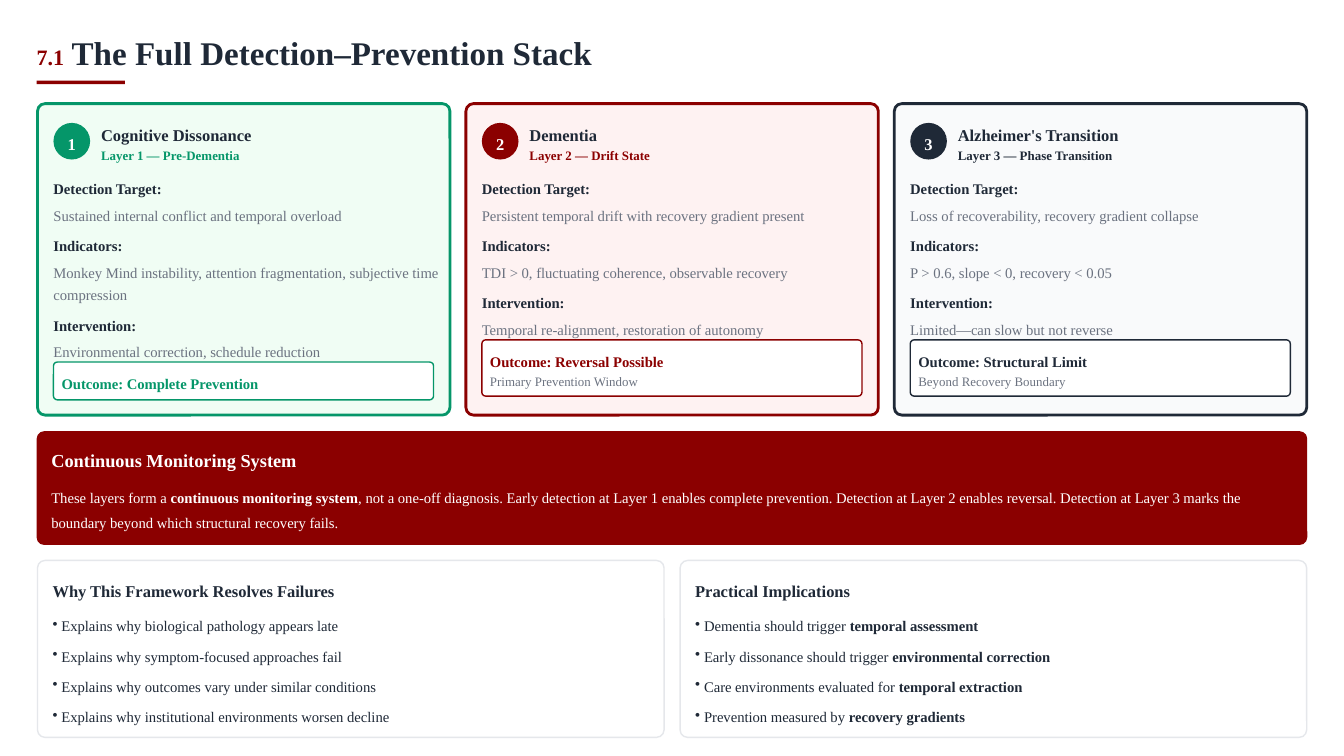
from dataclasses import dataclass
from typing import NamedTuple

from lxml.etree import SubElement
from pptx import Presentation
from pptx.dml.color import RGBColor
from pptx.enum.shapes import MSO_SHAPE as Preset
from pptx.enum.text import MSO_ANCHOR as Anchor, PP_ALIGN as Align
from pptx.oxml.ns import qn
from pptx.util import Pt

FONT = "Times New Roman"
WHITE = RGBColor(0xFF, 0xFF, 0xFF)
INK = RGBColor(0x1F, 0x29, 0x37)
GREY = RGBColor(0x6B, 0x72, 0x80)
RULE = RGBColor(0xE5, 0xE7, 0xEB)
CRIMSON = RGBColor(0x8B, 0x00, 0x00)
GREEN = RGBColor(0x05, 0x96, 0x69)
MINT = RGBColor(0xF0, 0xFD, 0xF4)
ROSE = RGBColor(0xFE, 0xF2, 0xF2)
MIST = RGBColor(0xF9, 0xFA, 0xFB)

LEFT, CONTENT_WIDTH = 26.2, 907.6
CARD_LEFT, CARD_TOP, CARD_WIDTH, CARD_HEIGHT, CARD_STEP = 26.8, 74, 294.6, 222.5, 306
PANEL_TOP, PANEL_WIDTH, PANEL_HEIGHT, PANEL_STEP = 400.3, 447.6, 126.4, 459
BODY_SIZE, LINE_HEIGHT, BULLET_INDENT = 10.5, 15.8, 6.3
SECTION_STEP = 39.4


class Box(NamedTuple):
    left: float
    top: float
    width: float
    height: float


class Run(NamedTuple):
    text: str
    bold: bool = False


@dataclass
class Line:
    runs: list[Run]
    size: float = BODY_SIZE
    color: RGBColor = INK
    spacing: float = 1.3
    before: float = 0
    align: Align = Align.LEFT
    bullet: bool = False


@dataclass
class Layer:
    title: str
    state: str
    accent: RGBColor
    tint: RGBColor
    findings: list[str]
    outcome: str
    outcome_note: str = ""
    wrapped_lines: int = 0


@dataclass
class Panel:
    title: str
    points: list[list[Run]]


LABELS = ["Detection Target:", "Indicators:", "Intervention:"]
LAYERS = [
    Layer("Cognitive Dissonance", "Pre-Dementia", GREEN, MINT,
          ["Sustained internal conflict and temporal overload",
           "Monkey Mind instability, attention fragmentation, subjective time compression",
           "Environmental correction, schedule reduction"],
          "Complete Prevention", wrapped_lines=1),
    Layer("Dementia", "Drift State", CRIMSON, ROSE,
          ["Persistent temporal drift with recovery gradient present",
           "TDI > 0, fluctuating coherence, observable recovery",
           "Temporal re-alignment, restoration of autonomy"],
          "Reversal Possible", "Primary Prevention Window"),
    Layer("Alzheimer's Transition", "Phase Transition", INK, MIST,
          ["Loss of recoverability, recovery gradient collapse",
           "P > 0.6, slope < 0, recovery < 0.05",
           "Limited—can slow but not reverse"],
          "Structural Limit", "Beyond Recovery Boundary"),
]
PANELS = [
    Panel("Why This Framework Resolves Failures", [
        [Run(f"Explains why {reason}")] for reason in (
            "biological pathology appears late",
            "symptom-focused approaches fail",
            "outcomes vary under similar conditions",
            "institutional environments worsen decline")]),
    Panel("Practical Implications", [
        [Run(lead), Run(stress, True)] for lead, stress in (
            ("Dementia should trigger ", "temporal assessment"),
            ("Early dissonance should trigger ", "environmental correction"),
            ("Care environments evaluated for ", "temporal extraction"),
            ("Prevention measured by ", "recovery gradients"))]),
]


def bold(text: str, size: float, color: RGBColor = INK, **options) -> Line:
    return Line([Run(text, True)], size, color, **options)


def write(frame, lines: list[Line], anchor: Anchor = Anchor.MIDDLE, inset: float = 0) -> None:
    frame_format = {"word_wrap": True, "vertical_anchor": anchor, "margin_left": Pt(inset),
                    "margin_right": 0, "margin_top": 0, "margin_bottom": 0}
    for key, value in frame_format.items():
        setattr(frame, key, value)
    for index, line in enumerate(lines):
        paragraph = frame.add_paragraph() if index else frame.paragraphs[0]
        if line.bullet:
            props = paragraph._p.get_or_add_pPr()
            props.set("marL", str(Pt(BULLET_INDENT)))
            props.set("indent", str(-Pt(BULLET_INDENT)))
            SubElement(props, qn("a:buChar")).set("char", "•")
        paragraph_format = {"alignment": line.align, "line_spacing": line.spacing,
                            "space_before": Pt(line.before if index else 0)}
        for key, value in paragraph_format.items():
            setattr(paragraph, key, value)
        for text, is_bold in line.runs:
            run = paragraph.add_run()
            run.text = text
            for key, value in {"name": FONT, "size": Pt(line.size), "bold": is_bold}.items():
                setattr(run.font, key, value)
            run.font.color.rgb = line.color


def add_text(slide, box: Box, *lines: Line, anchor: Anchor = Anchor.MIDDLE) -> None:
    write(slide.shapes.add_textbox(*map(Pt, box)).text_frame, list(lines), anchor)


def add_block(slide, preset: Preset, box: Box, fill: RGBColor | None = None,
              line: RGBColor | None = None, weight: float = 1, radius: float = 0):
    """Draw a flat preset shape; radius is the corner radius in points."""
    block = slide.shapes.add_shape(preset, *map(Pt, box))
    block.shadow.inherit = False
    if radius:
        block.adjustments[0] = radius / min(box.width, box.height)
    for paint, color in ((block.fill, fill), (block.line.fill, line)):
        if color is None:
            paint.background()
        else:
            paint.solid()
            paint.fore_color.rgb = color
    if line is not None:
        block.line.width = Pt(weight)
    return block


def add_layer_card(slide, number: int, layer: Layer) -> None:
    left = CARD_LEFT + (number - 1) * CARD_STEP
    inner = left + 11.4
    add_block(slide, Preset.ROUNDED_RECTANGLE, Box(left, CARD_TOP, CARD_WIDTH, CARD_HEIGHT),
              layer.tint, layer.accent, 2, 5.4)
    badge = add_block(slide, Preset.OVAL, Box(inner, 87.8, 26.2, 26.2), layer.accent)
    write(badge.text_frame, [bold(str(number), 11.8, WHITE, align=Align.CENTER)])
    add_text(slide, Box(inner + 34, 85, 125, 18), bold(layer.title, 11.8))
    add_text(slide, Box(inner + 34, 103.6, 125, 13),
             bold(f"Layer {number} — {layer.state}", 9.2, layer.accent, spacing=1.2))

    sections = []
    for label, finding in zip(LABELS, layer.findings):
        sections += [bold(label, BODY_SIZE, before=5.3),
                     Line([Run(finding)], color=GREY, before=2.7)]
    top = 124.6
    height = len(LABELS) * SECTION_STEP + layer.wrapped_lines * LINE_HEIGHT
    add_text(slide, Box(inner, top, 277.4, height), *sections, anchor=Anchor.TOP)

    outcome = [bold(f"Outcome: {layer.outcome}", BODY_SIZE, layer.accent)]
    if layer.outcome_note:
        outcome.append(Line([Run(layer.outcome_note)], 9.2, GREY, 1.2))
    frame = add_block(slide, Preset.ROUNDED_RECTANGLE,
                      Box(inner, top + height, 271.5, 40.2 if layer.outcome_note else 27),
                      WHITE, layer.accent, 1, 2.8)
    write(frame.text_frame, outcome, inset=5)


def add_panel(slide, index: int, panel: Panel) -> None:
    left = CARD_LEFT + index * PANEL_STEP
    add_block(slide, Preset.ROUNDED_RECTANGLE, Box(left, PANEL_TOP, PANEL_WIDTH, PANEL_HEIGHT),
              line=RULE, radius=5.4)
    add_text(slide, Box(left + 10.8, 411, 432, 18), bold(panel.title, 11.8))
    add_text(slide, Box(left + 10.8, 437, 431, 79),
             *(Line(point, before=5.3, bullet=True) for point in panel.points),
             anchor=Anchor.TOP)


def main() -> None:
    deck = Presentation()
    deck.slide_width, deck.slide_height = Pt(960), Pt(540)
    slide = deck.slides.add_slide(deck.slide_layouts[6])

    add_text(slide, Box(LEFT, 28.8, 25.2, 20.9), bold("7.1", 15.7, CRIMSON, spacing=1.1))
    add_text(slide, Box(51.2, 26, 389.5, 26),
             bold("The Full Detection–Prevention Stack", 23.6, spacing=0.9))
    add_block(slide, Preset.RECTANGLE, Box(LEFT, 57.6, 63, 2.6), CRIMSON)

    for number, layer in enumerate(LAYERS, 1):
        add_layer_card(slide, number, layer)

    add_block(slide, Preset.ROUNDED_RECTANGLE, Box(LEFT, 308, CONTENT_WIDTH, 81.3),
              CRIMSON, radius=5.4)
    add_text(slide, Box(36.7, 318.2, 893, 18),
             bold("Continuous Monitoring System", 13.1, WHITE, spacing=1.2))
    add_text(slide, Box(36.7, 344.9, 892, 33.8), Line([
        Run("These layers form a "), Run("continuous monitoring system", True),
        Run(", not a one-off diagnosis. Early detection at Layer 1 enables complete prevention. "
            "Detection at Layer 2 enables reversal. Detection at Layer 3 marks the boundary "
            "beyond which structural recovery fails.")], color=WHITE, spacing=1.4))

    for index, panel in enumerate(PANELS):
        add_panel(slide, index, panel)
    deck.save("out.pptx")


if __name__ == "__main__":
    main()
